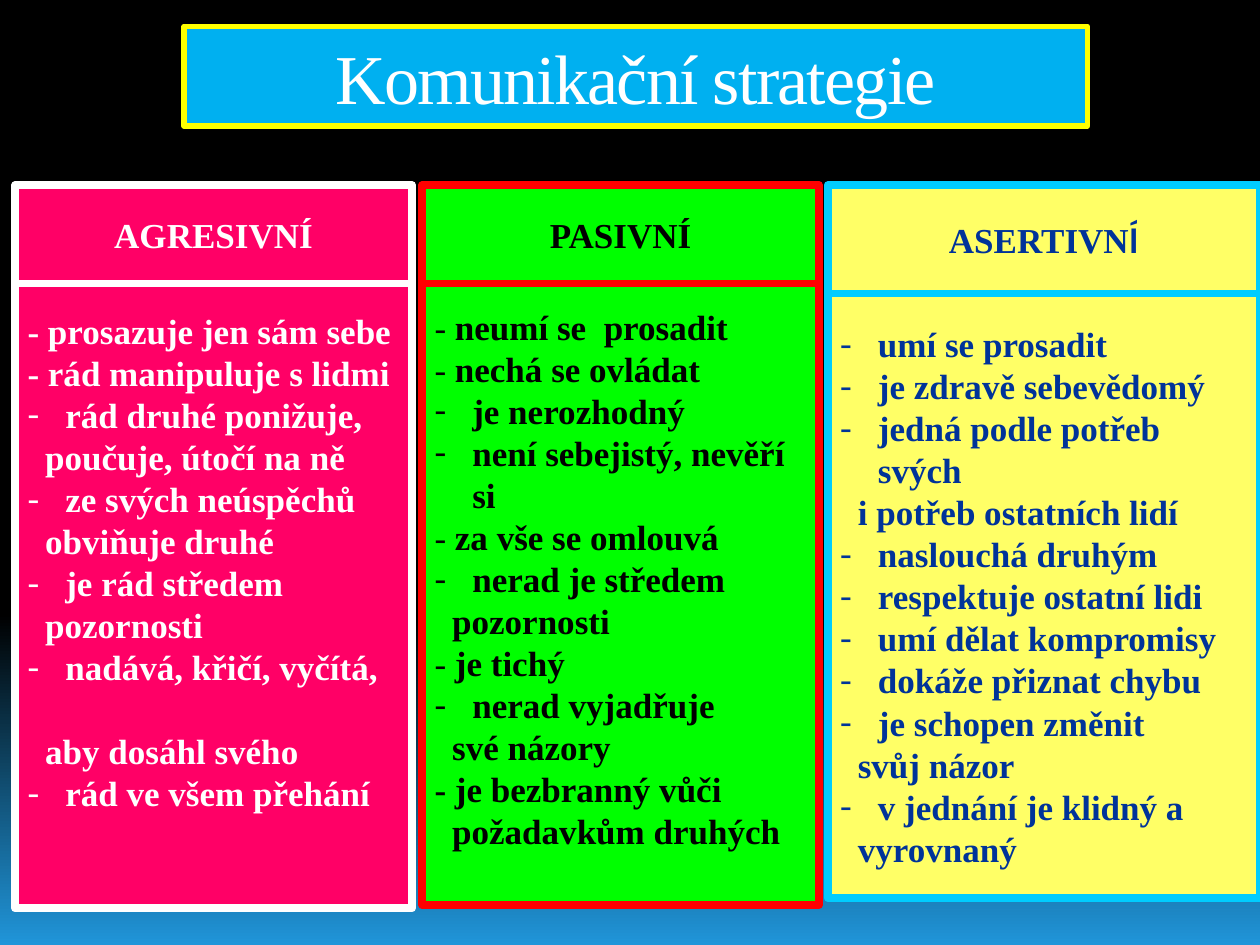
from lxml import etree
from pptx import Presentation
from pptx.dml.color import RGBColor
from pptx.enum import shapes, text
from pptx.oxml.ns import qn
from pptx.util import Inches, Pt

BLACK = RGBColor(0x00, 0x00, 0x00)
WHITE = RGBColor(0xFF, 0xFF, 0xFF)
SKY = RGBColor(0x20, 0x95, 0xD9)
AZURE = RGBColor(0x00, 0xB0, 0xF0)
CYAN = RGBColor(0x00, 0xCC, 0xFF)
NAVY = RGBColor(0x00, 0x33, 0x99)
YELLOW = RGBColor(0xFF, 0xFF, 0x00)
LEMON = RGBColor(0xFF, 0xFF, 0x66)
PINK = RGBColor(0xFF, 0x00, 0x66)
GREEN = RGBColor(0x00, 0xFF, 0x00)
RED = RGBColor(0xFF, 0x00, 0x00)

SERIF, SANS = "Times New Roman", "Cabin"
BULLET, MORE, DASH, LIGHT_DASH = "bullet", "more", "dash", "light dash"
LINE = Pt(24)

AGGRESSIVE = [
    (DASH, "prosazuje jen sám sebe"),
    (DASH, "rád manipuluje s lidmi"),
    (BULLET, "rád druhé ponižuje,"),
    (MORE, "poučuje, útočí na ně"),
    (BULLET, "ze svých neúspěchů"),
    (MORE, "obviňuje druhé"),
    (BULLET, "je rád středem"),
    (MORE, "pozornosti"),
    (BULLET, "nadává, křičí, vyčítá,"),
    (MORE, "aby dosáhl svého"),
    (BULLET, "rád ve všem přehání"),
]
PASSIVE = [
    (LIGHT_DASH, "neumí se  prosadit"),
    (LIGHT_DASH, "nechá se ovládat"),
    (BULLET, "je nerozhodný"),
    (BULLET, "není sebejistý, nevěří si"),
    (LIGHT_DASH, "za vše se omlouvá"),
    (BULLET, "nerad je středem"),
    (MORE, "pozornosti"),
    (LIGHT_DASH, "je tichý"),
    (BULLET, "nerad vyjadřuje"),
    (MORE, "své názory"),
    (DASH, "je bezbranný vůči"),
    (MORE, "požadavkům druhých"),
]
ASSERTIVE = [
    (BULLET, "umí se prosadit"),
    (BULLET, "je zdravě sebevědomý"),
    (BULLET, "jedná podle potřeb svých"),
    (MORE, "i potřeb ostatních lidí"),
    (BULLET, "naslouchá druhým"),
    (BULLET, "respektuje ostatní lidi"),
    (BULLET, "umí dělat kompromisy"),
    (BULLET, "dokáže přiznat chybu"),
    (BULLET, "je schopen změnit"),
    (MORE, "svůj názor"),
    (BULLET, "v jednání je klidný a"),
    (MORE, "vyrovnaný"),
]


def add_run(p, content, color, size=20, bold=True, font=SERIF):
    r = p.add_run()
    r.text = content
    r.font.size, r.font.bold, r.font.name = Pt(size), bold, font
    r.font.color.rgb = color
    return r


def style_box(sp, fill, line, width):
    sp.fill.solid()
    sp.fill.fore_color.rgb = fill
    sp.line.color.rgb = line
    sp.line.width = Pt(width)
    tf = sp.text_frame
    tf.word_wrap = True
    tf.vertical_anchor = text.MSO_ANCHOR.MIDDLE
    return tf


def add_box(slide, box, fill, line):
    sp = slide.shapes.add_shape(shapes.MSO_SHAPE.RECTANGLE, *map(Inches, box))
    sp.shadow.inherit = False
    return style_box(sp, fill, line, 4.5)


def indent(p, left, hanging=0):
    pPr = p._p.get_or_add_pPr()
    pPr.set("marL", str(Inches(left)))
    pPr.set("indent", str(-Inches(hanging)))
    return pPr


def add_item(p, kind, content, color):
    p.alignment = text.PP_ALIGN.LEFT
    p.line_spacing = LINE
    if kind == BULLET:
        pPr = indent(p, 0.3, 0.3)
        etree.SubElement(pPr, qn("a:buFont")).set("typeface", SERIF)
        etree.SubElement(pPr, qn("a:buChar")).set("char", "-")
    elif kind == MORE:
        indent(p, 0.14)
    else:
        add_run(p, "- ", color, bold=kind == DASH)
    add_run(p, content, color)


def add_column(slide, box, heading, items, head_height, fill, line, color,
               bottom=0.05, gap_after=None):
    """Heading box over a list box; gap_after is the item followed by an empty line."""
    x, y, w, h = box
    p = add_box(slide, (x, y, w, head_height), fill, line).paragraphs[0]
    p.alignment = text.PP_ALIGN.CENTER
    for content, font in heading:
        add_run(p, content, color, font=font)

    tf = add_box(slide, (x, y + head_height, w, h - head_height), fill, line)
    tf.margin_bottom = Inches(bottom)
    for i, (kind, content) in enumerate(items):
        p = tf.add_paragraph() if i else tf.paragraphs[0]
        if i == gap_after:
            p.space_after = LINE
        add_item(p, kind, content, color)


def add_title(slide, box):
    title = slide.shapes.title
    title.left, title.top, title.width, title.height = map(Inches, box)
    p = style_box(title, AZURE, YELLOW, 3).paragraphs[0]
    p.alignment = text.PP_ALIGN.CENTER
    r = add_run(p, "Komunikační strategie", WHITE, size=40, bold=False)
    r.font._element.set("spc", "-100")


def set_background(slide):
    fill = slide.background.fill
    fill.gradient()
    fill.gradient_angle = 270
    for stop, position, color in zip(fill.gradient_stops, (0.65, 1), (BLACK, SKY)):
        stop.position = position
        stop.color.rgb = color


def main():
    prs = Presentation()
    prs.slide_width, prs.slide_height = Inches(10), Inches(7.5)
    slide = prs.slides.add_slide(prs.slide_layouts[5])
    set_background(slide)
    add_title(slide, (1.46, 0.21, 7.17, 0.79))
    add_column(slide, (0.12, 1.47, 3.15, 5.74), [("AGRESIVNÍ", SERIF)], AGGRESSIVE,
               0.78, PINK, WHITE, WHITE, bottom=0.6, gap_after=8)
    add_column(slide, (3.35, 1.47, 3.15, 5.71), [("PASIVNÍ", SERIF)], PASSIVE,
               0.78, GREEN, RED, BLACK, bottom=0.3)
    add_column(slide, (6.57, 1.47, 3.43, 5.66), [("ASERTIVN", SERIF), ("Í", SANS)],
               ASSERTIVE, 0.86, LEMON, CYAN, NAVY)
    prs.save("out.pptx")


if __name__ == "__main__":
    main()
